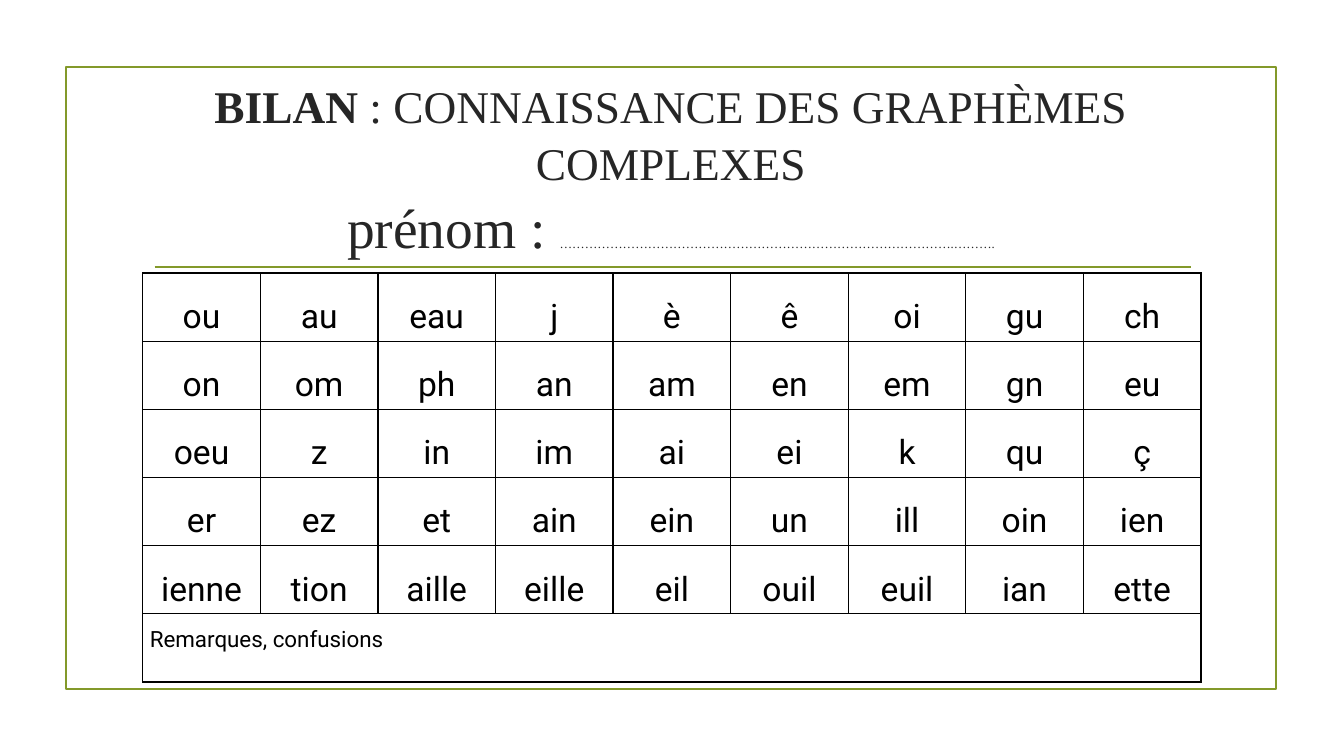
from copy import deepcopy
from dataclasses import dataclass

from lxml.etree import SubElement
from pptx import Presentation
from pptx.dml.color import RGBColor
from pptx.enum.shapes import MSO_CONNECTOR, MSO_SHAPE
from pptx.enum.text import MSO_ANCHOR, MSO_AUTO_SIZE, PP_ALIGN
from pptx.oxml.ns import qn
from pptx.util import Inches, Pt


@dataclass(frozen=True)
class Theme:
    """Colours, fonts and type sizes of the slide."""
    accent: str = "83992A"
    title_colour: str = "262626"
    ink: str = "000000"
    paper: str = "FFFFFF"
    title_font: str = "Times New Roman"
    table_font: str = "Roboto"
    title_size: float = 32.4
    name_size: float = 39.6
    dots_size: float = 9
    grapheme_size: float = 24
    remarks_size: float = 16
    rule_width: float = 1.25
    border_width: float = 1


class SlideBuilder:
    """Places styled elements on a grid of 16 columns by 9 rows."""

    def __init__(self, presentation, theme):
        """Add a title-only slide to the presentation."""
        self.theme = theme
        self.slide = presentation.slides.add_slide(presentation.slide_layouts[5])
        self.column = presentation.slide_width / 16
        self.row = presentation.slide_height / 9

    def place(self, left, top, width, height):
        """Turn columns and rows into slide lengths."""
        return (round(left * self.column), round(top * self.row),
                round(width * self.column), round(height * self.row))

    def style(self, font, name, size, colour, bold=False):
        """Format a font."""
        font.name, font.size, font.bold = name, Pt(size), bold
        font.color.rgb = RGBColor.from_string(colour)

    def rule(self, line):
        """Format an accent line."""
        line.color.rgb = RGBColor.from_string(self.theme.accent)
        line.width = Pt(self.theme.rule_width)

    def frame(self, *area):
        """Draw an outlined rectangle."""
        shape = self.slide.shapes.add_shape(MSO_SHAPE.RECTANGLE, *self.place(*area))
        shape.shadow.inherit = False
        shape.fill.background()
        self.rule(shape.line)

    def horizontal_line(self, left, top, width):
        """Draw a horizontal rule."""
        x, y, length, _ = self.place(left, top, width, 0)
        connector = self.slide.shapes.add_connector(
            MSO_CONNECTOR.STRAIGHT, x, y, x + length, y)
        self.rule(connector.line)
        SubElement(connector._element.spPr, qn("a:effectLst"))

    def title(self, lines, *area):
        """Fill the title with lines of (text, size, bold) runs."""
        shape = self.slide.shapes.title
        shape.left, shape.top, shape.width, shape.height = self.place(*area)
        text_frame = shape.text_frame
        text_frame.word_wrap = True
        text_frame.auto_size = MSO_AUTO_SIZE.NONE
        text_frame.vertical_anchor = MSO_ANCHOR.MIDDLE
        paragraph = text_frame.paragraphs[0]
        paragraph.alignment = PP_ALIGN.CENTER
        paragraph.line_spacing = 1.05
        for index, line in enumerate(lines):
            if index:
                paragraph.add_line_break()
                paragraph._p[-1].append(deepcopy(run._r.rPr))
            for text, size, bold in line:
                run = paragraph.add_run()
                run.text = text
                self.style(run.font, self.theme.title_font, size,
                           self.theme.title_colour, bold)

    def cell(self, cell, text, size, alignment, anchor):
        """Fill, border and write one table cell."""
        properties = cell._tc.get_or_add_tcPr()
        for side in ("lnL", "lnR", "lnT", "lnB"):
            border = SubElement(properties, qn(f"a:{side}"),
                                w=str(Pt(self.theme.border_width)))
            fill = SubElement(border, qn("a:solidFill"))
            SubElement(fill, qn("a:srgbClr"), val=self.theme.ink)
        cell.fill.solid()
        cell.fill.fore_color.rgb = RGBColor.from_string(self.theme.paper)
        cell.margin_left = cell.margin_right = Inches(0.07)
        cell.margin_top = cell.margin_bottom = 0
        cell.vertical_anchor = anchor
        cell.text_frame.text = text
        paragraph = cell.text_frame.paragraphs[0]
        paragraph.alignment = alignment
        paragraph.line_spacing = 1.5
        self.style(paragraph.font, self.theme.table_font, size, self.theme.ink)
        for run in paragraph.runs:
            self.style(run.font, self.theme.table_font, size, self.theme.ink)

    def table(self, rows, remarks, *area):
        """Add a grid of graphemes closed by a full-width remarks row."""
        left, top, width, height = self.place(*area)
        row_count, column_count = len(rows) + 1, len(rows[0])
        table = self.slide.shapes.add_table(
            row_count, column_count, left, top, width, height).table
        for column in table.columns:
            column.width = round(width / column_count)
        for row in table.rows:
            row.height = round(height / row_count)
        for row, graphemes in zip(table.rows, rows):
            for cell, grapheme in zip(row.cells, graphemes):
                self.cell(cell, grapheme, self.theme.grapheme_size,
                          PP_ALIGN.CENTER, MSO_ANCHOR.MIDDLE)
        last = row_count - 1
        for cell in table.rows[last].cells:
            self.cell(cell, "", self.theme.remarks_size, PP_ALIGN.LEFT, MSO_ANCHOR.TOP)
        first_cell = table.cell(last, 0)
        first_cell.merge(table.cell(last, column_count - 1))
        paragraph = first_cell.text_frame.paragraphs[0]
        paragraph.text = remarks
        self.style(paragraph.runs[0].font, self.theme.table_font,
                   self.theme.remarks_size, self.theme.ink)


GRAPHEMES = [row.split() for row in (
    "ou au eau j è ê oi gu ch",
    "on om ph an am en em gn eu",
    "oeu z in im ai ei k qu ç",
    "er ez et ain ein un ill oin ien",
    "ienne tion aille eille eil ouil euil ian ette",
)]


def main():
    """Build and save the assessment slide."""
    presentation = Presentation()
    presentation.slide_width, presentation.slide_height = Inches(13.33), Inches(7.5)
    theme = Theme()
    builder = SlideBuilder(presentation, theme)
    builder.frame(0.79, 0.8, 14.4, 7.4)
    builder.horizontal_line(1.84, 3.18, 12.34)
    builder.title([
        [("BILAN", theme.title_size, True),
         (" : CONNAISSANCE DES GRAPHÈMES COMPLEXES", theme.title_size, False)],
        [("prénom : ", theme.name_size, False),
         ("………………………………………………………………………………….……….", theme.dots_size, False)],
    ], 0.78, 0.82, 14.41, 2.35)
    builder.table(GRAPHEMES, "Remarques, confusions", 1.7, 3.25, 12.6, 4.87)
    presentation.save("out.pptx")


if __name__ == "__main__":
    main()
